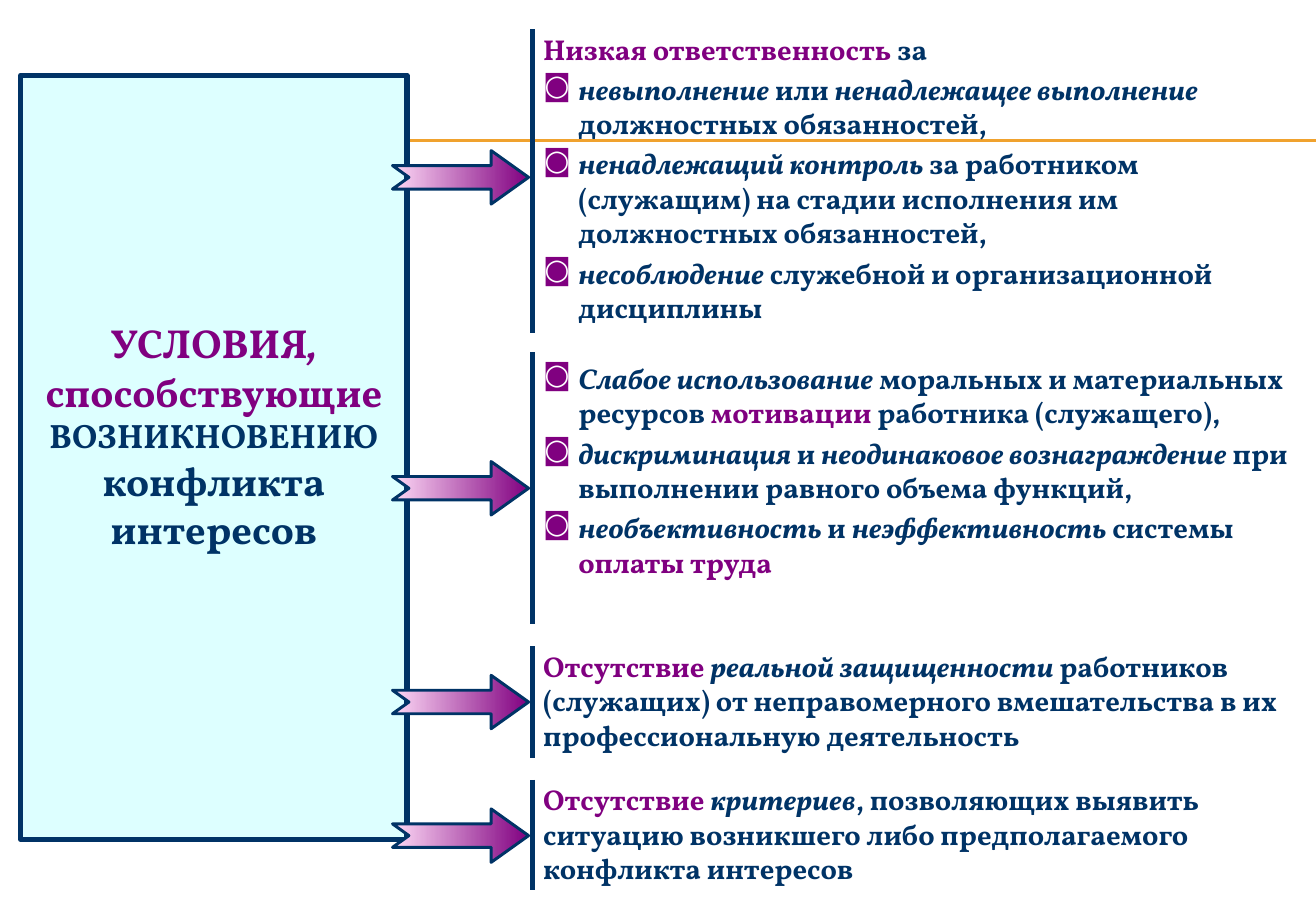
from lxml import etree
from pptx import Presentation
from pptx.dml.color import RGBColor
from pptx.enum.shapes import MSO_CONNECTOR, MSO_SHAPE
from pptx.enum.text import MSO_ANCHOR, MSO_AUTO_SIZE, PP_ALIGN
from pptx.oxml.ns import qn
from pptx.util import Inches, Pt

STRAIGHT = MSO_CONNECTOR.STRAIGHT
NOTCHED_ARROW = MSO_SHAPE.NOTCHED_RIGHT_ARROW
TOP, MIDDLE = MSO_ANCHOR.TOP, MSO_ANCHOR.MIDDLE
NO_AUTOFIT = MSO_AUTO_SIZE.NONE
CENTER = PP_ALIGN.CENTER

NAVY, PURPLE, PINK = "003366", "800080", "FEDAF6"
PALE_CYAN, ORANGE = "DDFFFF", "F0A22E"

# Run styles: plain, emphasised, highlighted
PLAIN = {"color": NAVY, "italic": False}
EMPH = {"color": NAVY, "italic": True}
MARK = {"color": PURPLE, "italic": False}


def rgb(value):
    return RGBColor.from_string(value)


class ConditionsSlide:
    font = "Vollkorn"
    body_size = 17
    hang = Inches(0.29)

    def __init__(self, prs):
        self.slide = prs.slides.add_slide(prs.slide_layouts[5])
        self.shapes = self.slide.shapes

    def line(self, x1, y1, x2, y2, color, width):
        rule = self.shapes.add_connector(
            STRAIGHT, Inches(x1), Inches(y1), Inches(x2), Inches(y2))
        rule.line.color.rgb = rgb(color)
        rule.line.width = Pt(width)
        etree.SubElement(rule.element.spPr, qn("a:effectLst"))

    def frame(self, shape, anchor, **margins):
        frame = shape.text_frame
        values = {"word_wrap": True, "auto_size": NO_AUTOFIT,
                  "vertical_anchor": anchor}
        for side in ("left", "top", "right", "bottom"):
            values["margin_" + side] = Inches(margins.get(side, 0))
        for name, value in values.items():
            setattr(frame, name, value)
        return frame

    def run(self, paragraph, text, style, size):
        run = paragraph.add_run()
        run.text = text
        values = {"name": self.font, "size": Pt(size), "bold": True,
                  "italic": style["italic"]}
        for name, value in values.items():
            setattr(run.font, name, value)
        run.font.color.rgb = rgb(style["color"])

    def bullet(self, paragraph):
        props = paragraph._p.get_or_add_pPr()
        props.set("marL", str(self.hang))
        props.set("indent", str(-self.hang))
        color = etree.SubElement(props, qn("a:buClr"))
        etree.SubElement(color, qn("a:srgbClr"), val=PURPLE)
        etree.SubElement(props, qn("a:buChar"), char="◙")

    def title(self, left, top, width, height, lines):
        title = self.shapes.title
        title.left, title.top = Inches(left), Inches(top)
        title.width, title.height = Inches(width), Inches(height)
        title.fill.solid()
        title.fill.fore_color.rgb = rgb(PALE_CYAN)
        title.line.color.rgb = rgb(NAVY)
        title.line.width = Pt(3)
        # Bring the title in front of the rules drawn so far
        title.element.getparent().append(title.element)
        frame = self.frame(title, MIDDLE, bottom=0.36)
        for i, (size, runs) in enumerate(lines):
            paragraph = frame.add_paragraph() if i else frame.paragraphs[0]
            paragraph.alignment = CENTER
            for text, style in runs:
                self.run(paragraph, text, style, size)

    def arrow(self, left, middle, width=1.12, height=0.44):
        arrow = self.shapes.add_shape(
            NOTCHED_ARROW, Inches(left), Inches(middle - height / 2),
            Inches(width), Inches(height))
        arrow.shadow.inherit = False
        arrow.adjustments[0], arrow.adjustments[1] = 0.44, 0.7
        arrow.fill.gradient()
        arrow.fill.gradient_angle = 0
        for stop, color in zip(arrow.fill.gradient_stops, (PINK, PURPLE)):
            stop.color.rgb = rgb(color)
        arrow.line.color.rgb = rgb(NAVY)
        arrow.line.width = Pt(1.75)

    def text(self, left, top, width, height, paragraphs):
        box = self.shapes.add_textbox(
            Inches(left), Inches(top), Inches(width), Inches(height))
        frame = self.frame(box, TOP, left=0.12)
        for i, (bulleted, runs) in enumerate(paragraphs):
            paragraph = frame.add_paragraph() if i else frame.paragraphs[0]
            if i:
                paragraph.space_before = Pt(3.4)
            if bulleted:
                self.bullet(paragraph)
            for text, style in runs:
                self.run(paragraph, text, style, self.body_size)


TITLE_LINES = [
    (24, [("УСЛОВИЯ", MARK), (",", {"color": PURPLE, "italic": True})]),
    (24, [("способствующие", MARK)]),
    (20, [("ВОЗНИКНОВЕНИЮ", PLAIN)]),
    (24, [("конфликта", PLAIN)]),
    (24, [("интересов", PLAIN)]),
]

RESPONSIBILITY = [
    (False, [("Низкая ответственность", MARK), (" за", PLAIN)]),
    (True, [("невыполнение", EMPH), (" или ", PLAIN),
            ("ненадлежащее выполнение", EMPH),
            (" должностных обязанностей,", PLAIN)]),
    (True, [("ненадлежащий контроль", EMPH),
            (" за работником (служащим) на стадии исполнения им "
             "должностных обязанностей,", PLAIN)]),
    (True, [("несоблюдение", EMPH),
            (" служебной и организационной дисциплины", PLAIN)]),
]
MOTIVATION = [
    (True, [("Слабое использование", EMPH),
            (" моральных и материальных ресурсов ", PLAIN),
            ("мотивации ", MARK), ("работника (служащего),", PLAIN)]),
    (True, [("дискриминация", EMPH), (" и ", PLAIN),
            ("неодинаковое вознаграждение", EMPH),
            (" при выполнении равного объема функций,", PLAIN)]),
    (True, [("необъективность", EMPH), (" и ", PLAIN),
            ("неэффективность", EMPH), (" системы ", PLAIN),
            ("оплаты труда", MARK)]),
]
PROTECTION = [
    (False, [("Отсутствие ", MARK), ("реальной защищенности ", EMPH),
             ("работников (служащих) от неправомерного вмешательства "
              "в их профессиональную деятельность", PLAIN)]),
]
CRITERIA = [
    (False, [("Отсутствие ", MARK), ("критериев", EMPH),
             (", позволяющих выявить ситуацию возникшего либо "
              "предполагаемого конфликта интересов", PLAIN)]),
]

# Arrow middle, text top, text height, bar top, bar bottom, paragraphs
CONDITIONS = [
    (1.46, 0.26, 2.46, 0.24, 2.74, RESPONSIBILITY),
    (4.02, 2.97, 1.83, 2.9, 5.14, MOTIVATION),
    (5.78, 5.34, 0.86, 5.32, 6.24, PROTECTION),
    (6.88, 6.44, 0.85, 6.42, 7.33, CRITERIA),
]


def main():
    prs = Presentation()
    prs.slide_width, prs.slide_height = Inches(10.83), Inches(7.5)
    page = ConditionsSlide(prs)

    # Double rule behind the title panel
    for y in (1.15, 1.16):
        page.line(0.61, y, 10.83, y, ORANGE, 0.75)

    # Title panel
    page.title(0.17, 0.62, 3.18, 6.29, TITLE_LINES)

    # Conditions: arrow, text and side bar
    for middle, top, height, bar_top, bar_bottom, paragraphs in CONDITIONS:
        page.arrow(3.23, middle)
        page.text(4.35, top, 6.3, height, paragraphs)
        page.line(4.38, bar_top, 4.38, bar_bottom, NAVY, 3)

    prs.save("out.pptx")


if __name__ == "__main__":
    main()
